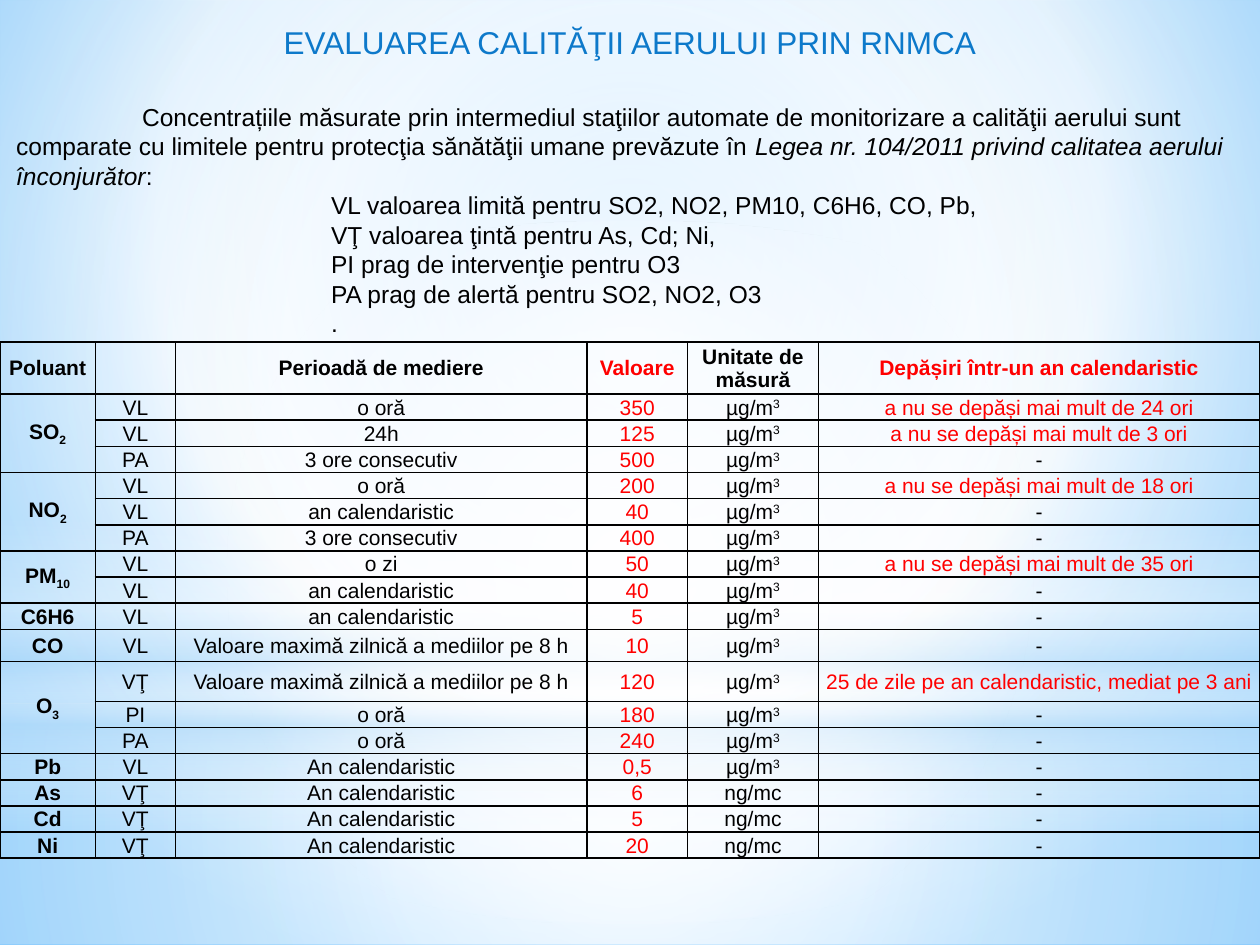
from lxml import etree
from pptx import Presentation
from pptx.dml.color import RGBColor
from pptx.enum.shapes import MSO_SHAPE
from pptx.enum.text import MSO_ANCHOR, MSO_AUTO_SIZE, PP_ALIGN
from pptx.oxml import parse_xml
from pptx.oxml.ns import qn
from pptx.util import Pt

RECT, OVAL = MSO_SHAPE.RECTANGLE, MSO_SHAPE.OVAL
TOP, MIDDLE = MSO_ANCHOR.TOP, MSO_ANCHOR.MIDDLE
LEFT, CENTER = PP_ALIGN.LEFT, PP_ALIGN.CENTER
FIXED = MSO_AUTO_SIZE.NONE

BLACK = RGBColor(0, 0, 0)
RED = RGBColor(0xFF, 0, 0)
BLUE = RGBColor(0x0D, 0x79, 0xCA)
WHITE = RGBColor(0xFF, 0xFF, 0xFF)
PALE = RGBColor(0xB4, 0xDC, 0xFA)
SKY = RGBColor(0x9E, 0xD5, 0xFF)
DEEP = RGBColor(0x5B, 0xB9, 0xFF)
FONT = "Arial"
NS = 'xmlns:a="http://schemas.openxmlformats.org/drawingml/2006/main"'

MID = (50, 50, 50, 50)
LAYERS = [
    (RECT, (0, 402, 720, 138), MID,
     [(0, WHITE, 91), (37, WHITE, 76), (100, PALE, 79)]),
    (RECT, (0, 0, 720, 402), MID,
     [(0, WHITE, 89), (48, WHITE, 62), (100, PALE, 79)]),
    (RECT, (0, 296.6, 720, 180), None,
     [(0, WHITE, 0), (29, WHITE, 30), (45, PALE, 40),
      (55, WHITE, 26), (65, PALE, 60), (100, WHITE, 0)]),
    (OVAL, (0, 126, 720, 402), MID, [(0, WHITE, 100), (56, WHITE, 0)]),
]

INTRO = [
    ("Concentrațiile măsurate prin intermediul staţiilor automate de "
     "monitorizare a calităţii aerului sunt comparate cu limitele pentru "
     "protecţia sănătăţii umane prevăzute în ", False),
    ("Legea nr. 104/2011 privind calitatea aerului înconjurător", True),
    (":", False),
]
TERMS = [
    "VL valoarea limită pentru SO2, NO2, PM10, C6H6, CO, Pb,",
    "VŢ valoarea ţintă pentru As, Cd; Ni,",
    "PI prag de intervenţie pentru O3",
    "PA prag de alertă pentru SO2, NO2, O3",
    ".",
]

HEAD = ["Poluant", "", "Perioadă de mediere", "Valoare",
        "Unitate de măsură", "Depășiri într-un an calendaristic"]
MICRO, NANO = "µg/m^3", "ng/mc"
HOUR, YEAR, FULL = "o oră", "an calendaristic", "An calendaristic"
THREE = "3 ore consecutiv"
PEAK = "Valoare maximă zilnică a mediilor pe 8 h"
MOST = "a nu se depăși mai mult de {} ori"
GROUPS = [
    ("SO_2", MICRO, [("VL", HOUR, "350", MOST.format(24)),
                     ("VL", "24h", "125", MOST.format(3)),
                     ("PA", THREE, "500", "-")]),
    ("NO_2", MICRO, [("VL", HOUR, "200", MOST.format(18)),
                     ("VL", YEAR, "40", "-"),
                     ("PA", THREE, "400", "-")]),
    ("PM_10", MICRO, [("VL", "o zi", "50", MOST.format(35)),
                      ("VL", YEAR, "40", "-")]),
    ("C6H6", MICRO, [("VL", YEAR, "5", "-")]),
    ("CO", MICRO, [("VL", PEAK, "10", "-")]),
    ("O_3", MICRO, [("VŢ", PEAK, "120",
                     "25 de zile pe an calendaristic, mediat pe 3 ani"),
                    ("PI", HOUR, "180", "-"),
                    ("PA", HOUR, "240", "-")]),
    ("Pb", MICRO, [("VL", FULL, "0,5", "-")]),
    ("As", NANO, [("VŢ", FULL, "6", "-")]),
    ("Cd", NANO, [("VŢ", FULL, "5", "-")]),
    ("Ni", NANO, [("VŢ", FULL, "20", "-")]),
]
COLS = [54.5, 45.8, 235.2, 57.4, 74.9, 252.2]
ROW = 14.95
TALL = {0: 29.9, 10: 18.3, 11: 22.9}


def blend(stops, focus):
    marks = "".join(
        f'<a:gs pos="{pos * 1000}"><a:srgbClr val="{tone}">'
        f'<a:alpha val="{alpha * 1000}"/></a:srgbClr></a:gs>'
        for pos, tone, alpha in stops)
    if focus:
        sides = " ".join(f'{side}="{part * 1000}"' for side, part in zip("ltrb", focus))
        way = f'<a:path path="circle"><a:fillToRect {sides}/></a:path>'
    else:
        way = '<a:lin ang="5400000" scaled="0"/>'
    return parse_xml(f'<a:gradFill {NS} rotWithShape="1"><a:gsLst>{marks}</a:gsLst>{way}</a:gradFill>')


def style(para, size, tone, bold=False, align=LEFT):
    para.alignment = align
    para.font.name = FONT
    para.font.size = Pt(size)
    para.font.bold = bold
    para.font.color.rgb = tone


def place(shape, box):
    shape.left, shape.top, shape.width, shape.height = map(Pt, box)


def draw_back(slide):
    fill = slide.background.fill
    fill.solid()
    old = slide._element.find(".//" + qn("p:bgPr")).find(qn("a:solidFill"))
    old.getparent().replace(old, blend(
        [(0, SKY, 100), (60, WHITE, 100), (100, DEEP, 100)], (20, 10, 20, 60)))
    for kind, box, focus, stops in LAYERS:
        layer = slide.shapes.add_shape(kind, *map(Pt, box))
        layer.shadow.inherit = False
        layer.line.fill.background()
        layer.fill.solid()
        old = layer._element.spPr.find(qn("a:solidFill"))
        layer._element.spPr.replace(old, blend(stops, focus))


def draw_title(title, box):
    place(title, box)
    frame = title.text_frame
    frame.text = "EVALUAREA CALITĂŢII AERULUI PRIN RNMCA"
    frame.word_wrap = False
    frame.auto_size = FIXED
    frame.vertical_anchor = TOP
    style(frame.paragraphs[0], 18, BLUE, align=CENTER)


def draw_body(body, box):
    place(body, box)
    frame = body.text_frame
    frame.word_wrap = True
    frame.auto_size = FIXED
    for text, slant in INTRO:
        run = frame.paragraphs[0].add_run()
        run.text = text
        run.font.italic = slant
    for term in TERMS:
        para = frame.add_paragraph()
        para.text = term
        para.level = 4
    for rank, para in enumerate(frame.paragraphs):
        style(para, 14, BLACK)
        para.space_before = Pt(0)
        para.line_spacing = Pt(16.8)
        props = para._p.get_or_add_pPr()
        props.set("marL", str(Pt(180 if rank else 0)))
        props.set("indent", str(Pt(0 if rank else 72)))
        props.insert_element_before(
            parse_xml(f"<a:buNone {NS}/>"), "a:tabLst", "a:defRPr", "a:extLst")


def fill_cell(cell, text, tone, bold):
    cell.margin_left = cell.margin_right = cell.margin_top = Pt(0.7)
    cell.margin_bottom = Pt(0)
    cell.vertical_anchor = MIDDLE
    para = cell.text_frame.paragraphs[0]
    style(para, 12, tone, bold, CENTER)
    mark = "_" if "_" in text else "^"
    main, _, small = text.partition(mark)
    if main:
        para.add_run().text = main
    else:
        etree.SubElement(para._p, qn("a:endParaRPr"), sz="1200")
    if small:
        run = para.add_run()
        run.text = small
        run._r.get_or_add_rPr().set("baseline", "-25000" if mark == "_" else "30000")
    props = cell._tc.get_or_add_tcPr()
    for side in "LRTB":
        props.append(parse_xml(
            f'<a:ln{side} {NS} w="{Pt(1)}"><a:solidFill><a:srgbClr val="{BLACK}"/>'
            f'</a:solidFill></a:ln{side}>'))
    cell.fill.background()


def draw_table(slide, box):
    rows, spans = [HEAD], []
    for name, unit, lines in GROUPS:
        spans.append((len(rows), len(lines)))
        for rank, (code, period, value, over) in enumerate(lines):
            rows.append(["" if rank else name, code, period, value, unit, over])
    table = slide.shapes.add_table(len(rows), len(COLS), *map(Pt, box)).table
    table.first_row = table.horz_banding = False
    for col, width in zip(table.columns, COLS):
        col.width = Pt(width)
    for r, texts in enumerate(rows):
        table.rows[r].height = Pt(TALL.get(r, ROW))
        for c, text in enumerate(texts):
            tone = RED if c in (3, 5) and text != "-" else BLACK
            fill_cell(table.cell(r, c), text, tone, r == 0 or c == 0)
    for start, count in spans:
        if count > 1:
            table.cell(start, 0).merge(table.cell(start + count - 1, 0))


def main():
    deck = Presentation()
    deck.slide_width, deck.slide_height = Pt(720), Pt(540)
    slide = deck.slides.add_slide(deck.slide_layouts[1])
    title, body = slide.placeholders
    draw_back(slide)
    for holder in (title, body):
        slide.shapes._spTree.append(holder._element)
    draw_title(title, (147.6, 9.4, 424.8, 28.8))
    draw_body(body, (2, 54.7, 720, 143.3))
    draw_table(slide, (0, 195.3, 720, 295.4))
    deck.save("out.pptx")


if __name__ == "__main__":
    main()
